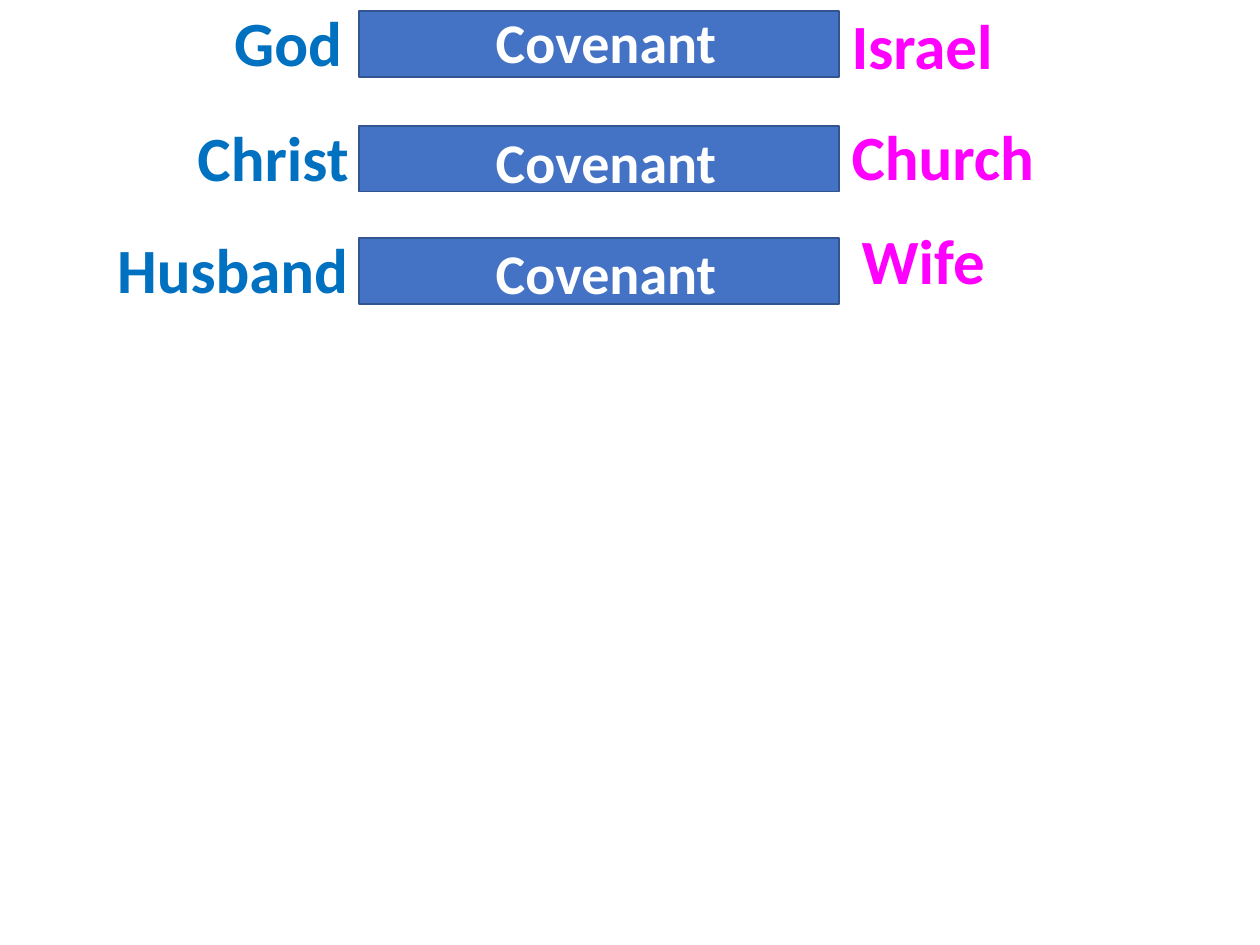
from pptx import Presentation
from pptx.dml.color import RGBColor
from pptx.enum.shapes import MSO_SHAPE
from pptx.enum.text import MSO_AUTO_SIZE, PP_ALIGN
from pptx.util import Pt

COLOURS = {
    "groom": "0070C0",
    "bride": "FF00FF",
    "bar": "4472C4",
    "bar_line": "325491",
    "covenant": "FFFFFF",
    "plain": "000000",
}


class CovenantSlide:
    font = "Calibri"

    def __init__(self, page):
        self.page = page

    def colour(self, name):
        return RGBColor.from_string(COLOURS[name])

    def bar(self, left, top, width, height):
        bar = self.page.shapes.add_shape(
            MSO_SHAPE.RECTANGLE, Pt(left), Pt(top), Pt(width), Pt(height))
        bar.shadow.inherit = False
        bar.fill.solid()
        bar.fill.fore_color.rgb = self.colour("bar")
        bar.line.color.rgb = self.colour("bar_line")
        bar.line.width = Pt(1)

    def label(self, left, top, width, height, spans, align=PP_ALIGN.LEFT):
        """Add one line of text; each span is (text, size, colour, bold)."""
        box = self.page.shapes.add_textbox(
            Pt(left), Pt(top), Pt(width), Pt(height))
        frame = box.text_frame
        frame.word_wrap = True
        frame.auto_size = MSO_AUTO_SIZE.SHAPE_TO_FIT_TEXT
        para = frame.paragraphs[0]
        para.alignment = align
        for text, size, colour, bold in spans:
            span = para.add_run()
            span.text = text
            span.font.name = self.font
            span.font.size = Pt(size)
            span.font.bold = bold
            span.font.color.rgb = self.colour(colour)


def main():
    deck = Presentation()
    deck.slide_width, deck.slide_height = Pt(720), Pt(540)
    slide = CovenantSlide(deck.slides.add_slide(deck.slide_layouts[6]))

    # groom (text, left, top, width), bar top, covenant top, bride (text, left, top)
    rows = [
        (("God", 126.7, -1.4, 248.4), 6.5, 0.7, ("Israel", 479.5, 0)),
        (("Christ", 105.8, 64.1, 268.6), 72, 69.1, ("Church", 479.5, 63.4)),
        (("Husband", 59.8, 128.2, 316.1), 136.1, 132.5, ("Wife", 485.3, 123.1)),
    ]
    for groom, bar_top, covenant_top, bride in rows:
        name, left, top, width = groom
        slide.label(left, top, width, 51,
                    [(name, 36, "groom", True), (" ", 18, "plain", False)])
        slide.bar(205.2, bar_top, 274.3, 37.5)
        slide.label(230.4, covenant_top, 231.8, 46,
                    [("Covenant", 32, "covenant", True)], PP_ALIGN.CENTER)
        name, left, top = bride
        slide.label(left, top, 164.9, 51, [(name, 36, "bride", True)])

    deck.save("out.pptx")


if __name__ == "__main__":
    main()
